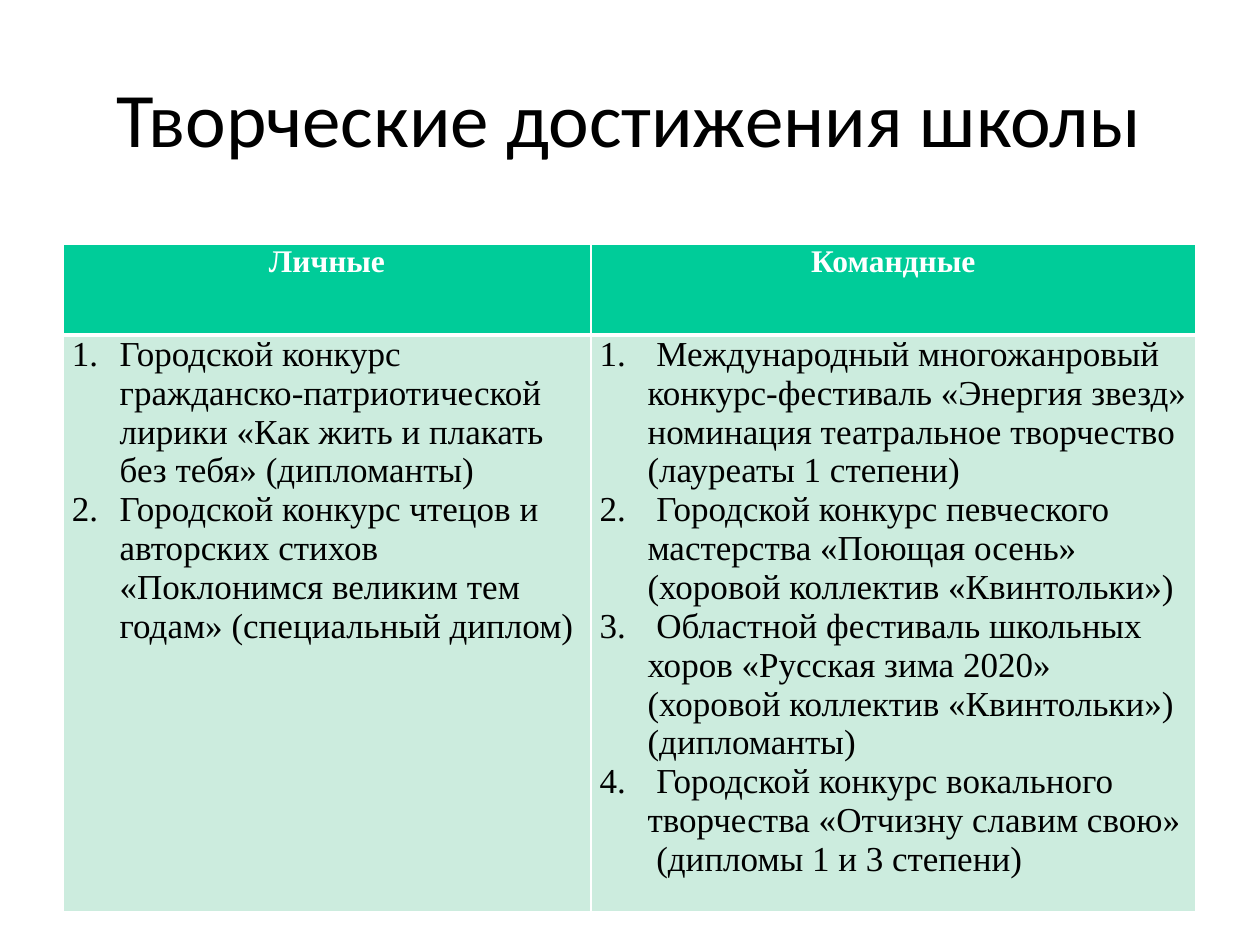
from dataclasses import dataclass

from lxml.etree import SubElement
from pptx import Presentation
from pptx.dml.color import RGBColor
from pptx.enum.text import MSO_ANCHOR, PP_ALIGN
from pptx.oxml import parse_xml
from pptx.oxml.ns import nsdecls, qn
from pptx.util import Inches, Pt


@dataclass(frozen=True)
class Theme:
    title_font: str = "Calibri"
    table_font: str = "Times New Roman"
    black: str = "000000"
    white: str = "FFFFFF"
    header_fill: str = "00CC99"
    body_fill: str = "CCECDE"
    title_size: int = 44
    header_size: int = 18
    body_size: int = 20
    thin: int = 1
    thick: int = 3


THEME = Theme()
TITLE = "Творческие достижения школы"
COLUMN_WIDTHS = (4.19, 4.8)
ROW_HEIGHTS = (0.72, 4.58)
ACHIEVEMENTS = {
    "Личные": (
        "Городской конкурс гражданско-патриотической лирики «Как жить и плакать без тебя» (дипломанты)",
        "Городской конкурс чтецов и авторских стихов «Поклонимся великим тем годам» (специальный диплом)",
    ),
    "Командные": (
        " Международный многожанровый конкурс-фестиваль «Энергия звезд» номинация театральное творчество (лауреаты 1 степени)",
        " Городской конкурс певческого мастерства «Поющая осень» (хоровой коллектив «Квинтольки»)",
        " Областной фестиваль школьных хоров «Русская зима 2020» (хоровой коллектив «Квинтольки») (дипломанты)",
        " Городской конкурс вокального творчества «Отчизну славим свою»\v (дипломы 1 и 3 степени)",
    ),
}


def format_runs(p, font, size, color, bold=False):
    for r in p.runs:
        r.font.name = font
        r.font.size = Pt(size)
        r.font.bold = bold
        r.font.color.rgb = RGBColor.from_string(color)


def add_title(slide):
    title = slide.shapes.title
    title.left, title.top = Inches(0.5), Inches(0.14)
    title.width, title.height = Inches(8.99), Inches(1.57)
    tf = title.text_frame
    tf.text = TITLE
    tf.vertical_anchor = MSO_ANCHOR.MIDDLE
    p = tf.paragraphs[0]
    p.alignment = PP_ALIGN.CENTER
    format_runs(p, THEME.title_font, THEME.title_size, THEME.black)


def set_borders(cell, top, bottom):
    """Draw white cell borders; top and bottom are widths in points."""
    widths = {"lnL": THEME.thin, "lnR": THEME.thin, "lnT": top, "lnB": bottom}
    tc_pr = cell._tc.get_or_add_tcPr()
    for i, (side, width) in enumerate(widths.items()):
        tc_pr.insert(i, parse_xml(
            f'<a:{side} {nsdecls("a")} w="{Pt(width)}"><a:solidFill>'
            f'<a:srgbClr val="{THEME.white}"/></a:solidFill></a:{side}>'))


def style_cell(cell, fill, top, bottom):
    cell.fill.solid()
    cell.fill.fore_color.rgb = RGBColor.from_string(fill)
    cell.margin_left = cell.margin_right = Inches(0.07)
    cell.margin_top = cell.margin_bottom = 0
    set_borders(cell, top, bottom)


def number_paragraph(p):
    """Give the paragraph an automatic number and a hanging indent."""
    p_pr = p._p.get_or_add_pPr()
    p_pr.set("marL", str(Inches(0.38)))
    p_pr.set("indent", str(-Inches(0.38)))
    color = SubElement(p_pr, qn("a:buClr"))
    SubElement(color, qn("a:srgbClr")).set("val", THEME.black)
    SubElement(p_pr, qn("a:buFont")).set("typeface", THEME.table_font)
    SubElement(p_pr, qn("a:buAutoNum")).set("type", "arabicPeriod")


def fill_header(cell, heading):
    style_cell(cell, THEME.header_fill, THEME.thin, THEME.thick)
    cell.text_frame.text = heading
    p = cell.text_frame.paragraphs[0]
    p.alignment = PP_ALIGN.CENTER
    format_runs(p, THEME.table_font, THEME.header_size, THEME.white, bold=True)


def fill_list(cell, items):
    style_cell(cell, THEME.body_fill, THEME.thick, THEME.thin)
    tf = cell.text_frame
    tf.text = "\n".join(items)
    for p in tf.paragraphs:
        number_paragraph(p)
        format_runs(p, THEME.table_font, THEME.body_size, THEME.black)


def add_achievements(slide):
    table = slide.shapes.add_table(
        len(ROW_HEIGHTS), len(COLUMN_WIDTHS), Inches(0.5), Inches(1.94),
        Inches(sum(COLUMN_WIDTHS)), Inches(sum(ROW_HEIGHTS))).table
    for column, width in zip(table.columns, COLUMN_WIDTHS):
        column.width = Inches(width)
    for row, height in zip(table.rows, ROW_HEIGHTS):
        row.height = Inches(height)
    for col, (heading, items) in enumerate(ACHIEVEMENTS.items()):
        fill_header(table.cell(0, col), heading)
        fill_list(table.cell(1, col), items)


def main():
    prs = Presentation()
    prs.slide_width, prs.slide_height = Inches(10), Inches(7.5)
    slide = prs.slides.add_slide(prs.slide_layouts.get_by_name("Title Only"))
    add_title(slide)
    add_achievements(slide)
    prs.save("out.pptx")


if __name__ == "__main__":
    main()
